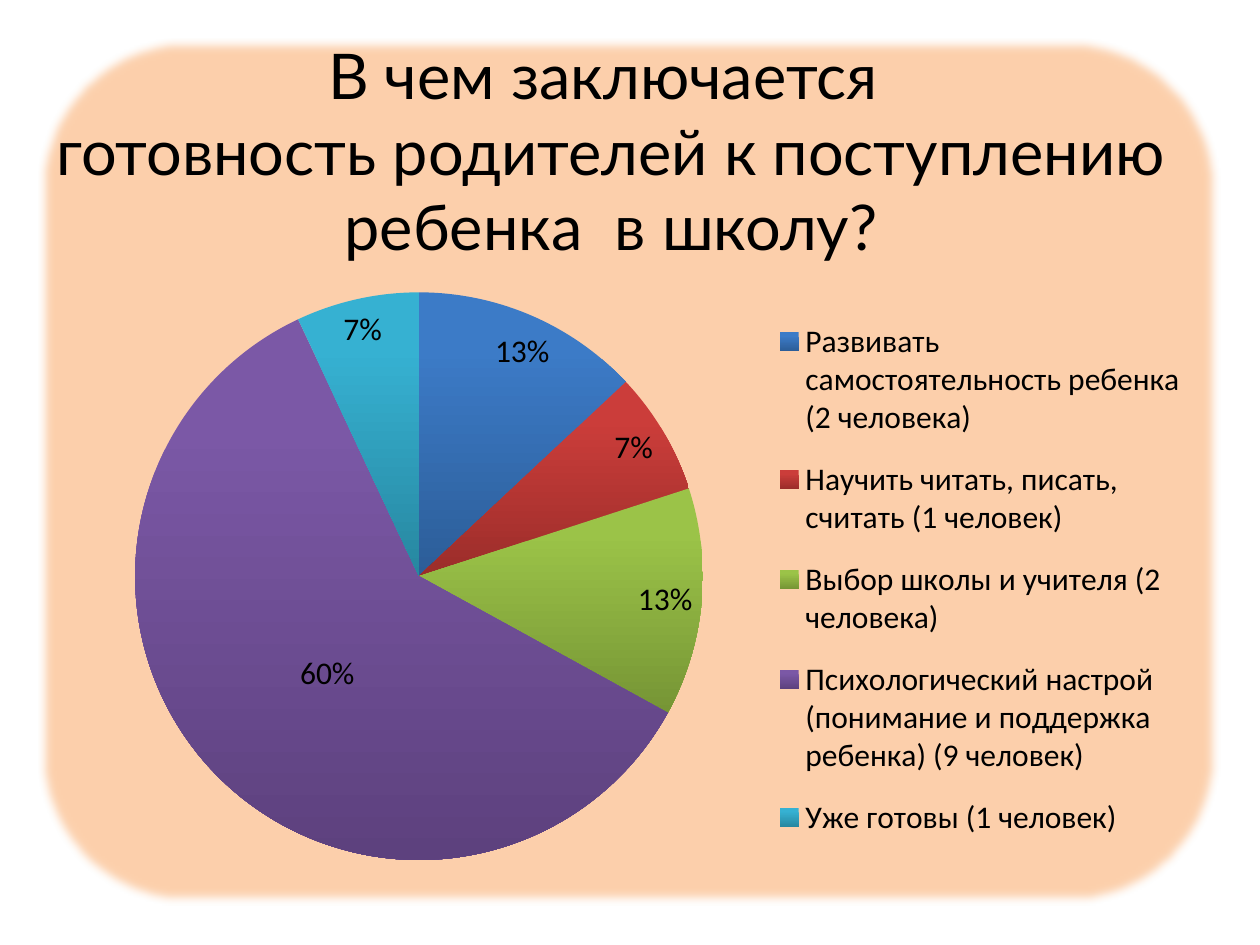
import pptx
import pptx.chart.data
import pptx.dml.color
import pptx.enum.chart
import pptx.enum.shapes
import pptx.enum.text
import pptx.oxml
import pptx.oxml.ns
import pptx.util

Inches = pptx.util.Inches
Pt = pptx.util.Pt
places = pptx.enum.chart.XL_LABEL_POSITION


def color(code):
    return pptx.dml.color.RGBColor.from_string(code)


def write(frame, text, size, font, ink):
    frame.word_wrap = True
    frame.vertical_anchor = pptx.enum.text.MSO_ANCHOR.MIDDLE
    para = frame.paragraphs[0]
    para.text = text
    para.alignment = pptx.enum.text.PP_ALIGN.CENTER
    para.font.size = Pt(size)
    para.font.name = font
    para.font.color.rgb = color(ink)


deck = pptx.Presentation()
deck.slide_width = Inches(10)
deck.slide_height = Inches(7.5)
slide = deck.slides.add_slide(deck.slide_layouts[6])
names = pptx.oxml.ns.nsdecls("a", "c")

panel = slide.shapes.add_shape(
    pptx.enum.shapes.MSO_SHAPE.ROUNDED_RECTANGLE,
    Inches(0.31), Inches(0.31), Inches(9.38), Inches(6.88))
panel.shadow.inherit = False
panel.fill.solid()
panel.fill.fore_color.rgb = color("FAC090")
panel.line.fill.background()
tint = panel.element.spPr.find(".//" + pptx.oxml.ns.qn("a:srgbClr"))
tint.append(pptx.oxml.parse_xml(f'<a:alpha {names} val="75000"/>'))
effect = panel.element.spPr.find(pptx.oxml.ns.qn("a:effectLst"))
effect.append(pptx.oxml.parse_xml(f'<a:softEdge {names} rad="63500"/>'))

title = slide.shapes.add_textbox(Inches(0.35), Inches(0.44), Inches(9), Inches(1.5))
write(title.text_frame,
      "В чем заключается \vготовность родителей к поступлению ребенка  в школу?",
      size=36, font="Lato", ink="000000")

parts = [
    ("Развивать самостоятельность ребенка (2 человека)", 13, "3C7BC7", "2C5D98"),
    ("Научить читать, писать, считать (1 человек)", 7, "CB3D3A", "9B2D2A"),
    ("Выбор школы и учителя (2 человека)", 13, "9BC348", "769535"),
    ("Психологический настрой (понимание и поддержка ребенка) (9 человек)", 60,
     "7B58A6", "5D417E"),
    ("Уже готовы (1 человек)", 7, "36B1D2", "2787A0"),
]
data = pptx.chart.data.CategoryChartData()
data.categories = [part[0] for part in parts]
data.add_series("Series 1", [part[1] for part in parts])
chart = slide.shapes.add_chart(
    pptx.enum.chart.XL_CHART_TYPE.PIE,
    Inches(0.28), Inches(1.86), Inches(9.37), Inches(5.12), data).chart
chart.has_title = False
chart.font.size = Pt(18)
chart.font.name = "Calibri"
chart.font.color.rgb = color("000000")
chart.has_legend = True
chart.legend.position = pptx.enum.chart.XL_LEGEND_POSITION.RIGHT
chart.legend.include_in_layout = False

plot = chart.plots[0]
plot.vary_by_categories = True
pie = plot.series[0]
for index, (label, value, light, dark) in enumerate(parts):
    fill = pie.points[index].format.fill
    fill.gradient()
    fill.gradient_angle = 270
    for stop, tone, place in zip(fill.gradient_stops, (light, dark), (0.2, 1)):
        stop.color.rgb = color(tone)
        stop.position = place

labels = pie.data_labels
labels.show_value = False
labels.show_percentage = True
labels.number_format = "0%"
labels.number_format_is_linked = False
labels.position = places.BEST_FIT
pie.points[3].data_label.position = places.CENTER
for tag, state in (("showVal", "0"), ("showPercent", "1")):
    for flag in chart.element.xpath(f".//c:dLbl/c:{tag}"):
        flag.set("val", state)

edges = '<c:xMode val="edge"/><c:yMode val="edge"/>'
inner = '<c:layoutTarget val="inner"/>' + edges
for tag, spot, modes, box in (("plotArea", 0, inner, (0.08, 0.09, 0.49, 0.88)),
                              ("legend", 1, edges, (0.63, 0.1, 0.34, 0.87)),
                              ("dLbl", 1, "", (0.01, 0))):
    area = chart.element.xpath(f".//c:{tag}")[0]
    for old in area.findall(pptx.oxml.ns.qn("c:layout")):
        area.remove(old)
    sizes = "".join(f'<c:{axis} val="{size}"/>' for axis, size in zip("xywh", box))
    area.insert(spot, pptx.oxml.parse_xml(
        f"<c:layout {names}><c:manualLayout>{modes}{sizes}"
        "</c:manualLayout></c:layout>"))

deck.save("out.pptx")
